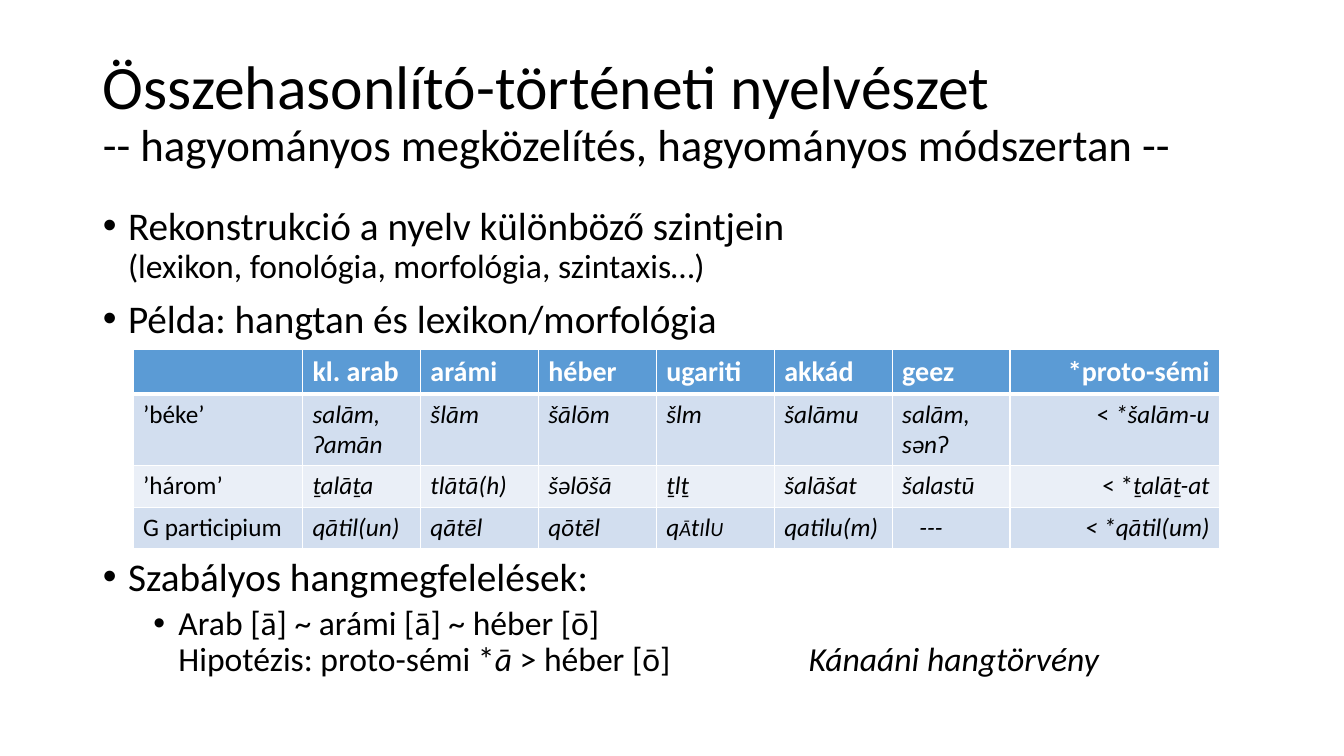
from lxml import etree
from pptx import Presentation
from pptx.dml.color import RGBColor
from pptx.enum.text import MSO_ANCHOR, MSO_AUTO_SIZE, PP_ALIGN
from pptx.oxml.ns import qn
from pptx.util import Inches, Pt

LEFT, RIGHT = PP_ALIGN.LEFT, PP_ALIGN.RIGHT
MIDDLE, TOP = MSO_ANCHOR.MIDDLE, MSO_ANCHOR.TOP
NO_FIT = MSO_AUTO_SIZE.NONE
FONT = "Calibri"
COLORS = {"text": "000000", "line": "FFFFFF", "head": "5B9BD5",
          "odd": "D2DEEF", "even": "EAEFF7"}


def add_runs(p, pieces, color="text"):
    """Add (text, size, style) runs; style may hold b(old), i(talic), c(aps, small)."""
    for text, size, style in pieces:
        for n, line in enumerate(text.split("\n")):
            if n:
                p.add_line_break()
            if not line:
                continue
            r = p.add_run()
            r.text = line
            r.font.name, r.font.size = FONT, Pt(size)
            r.font.bold, r.font.italic = "b" in style, "i" in style
            r.font.color.rgb = RGBColor.from_string(COLORS[color])
            if "c" in style:
                r._r.get_or_add_rPr().set("cap", "small")


def set_borders(cell, bottom):
    tcPr = cell._tc.get_or_add_tcPr()
    for n, (side, width) in enumerate([("L", 1), ("R", 1), ("T", 1), ("B", bottom)]):
        ln = etree.Element(qn(f"a:ln{side}"), w=str(Pt(width)))
        fill = etree.SubElement(ln, qn("a:solidFill"))
        etree.SubElement(fill, qn("a:srgbClr"), val=COLORS["line"])
        tcPr.insert(n, ln)


prs = Presentation()
prs.slide_width, prs.slide_height = Inches(13.33), Inches(7.5)
s = prs.slides.add_slide(prs.slide_layouts[1])
title, body = s.placeholders

# Title
title.left, title.top, title.width, title.height = map(Inches, (0.92, 0.4, 11.5, 1.45))
tf = title.text_frame
tf.auto_size, tf.vertical_anchor = NO_FIT, MIDDLE
p = tf.paragraphs[0]
p.alignment, p.line_spacing = LEFT, 0.9
add_runs(p, [("Összehasonlító-történeti nyelvészet\n", 44, ""),
             ("-- hagyományos megközelítés, hagyományos módszertan --", 32, "")])

# Bullets: level, space before, runs; the third leaves room for the table
bullets = [
    (0, 10, [("Rekonstrukció a nyelv különböző szintjein\n", 28, ""),
             ("(lexikon, fonológia, morfológia, szintaxis…)", 24, "")]),
    (0, 10, [("Példa: hangtan és lexikon/morfológia", 28, "")]),
    (0, 154, [("Szabályos hangmegfelelések:", 28, "")]),
    (1, 5, [("Arab [ā] ~ arámi [ā] ~ héber [ō]\nHipotézis: proto-sémi *", 24, ""),
            ("ā", 24, "i"), (" > héber [ō]\t", 24, ""),
            ("Kánaáni hangtörvény", 24, "i")]),
]
body.left, body.top, body.width, body.height = map(Inches, (0.92, 2, 11.76, 5.15))
tf = body.text_frame
tf.auto_size, tf.vertical_anchor = NO_FIT, TOP
for n, (level, before, pieces) in enumerate(bullets):
    p = tf.add_paragraph() if n else tf.paragraphs[0]
    p.level, p.line_spacing, p.space_before = level, 0.9, Pt(before)
    add_runs(p, pieces)
    pPr = p._p.get_or_add_pPr()
    pPr.set("marL", str(Inches(0.25 + 0.5 * level)))
    pPr.set("indent", str(-Inches(0.25)))
    etree.SubElement(pPr, qn("a:buFont"), typeface="Arial")
    etree.SubElement(pPr, qn("a:buChar"), char="•")
    if level:
        tabs = etree.SubElement(pPr, qn("a:tabLst"))
        etree.SubElement(tabs, qn("a:tab"), pos=str(Inches(7)), algn="l")

# Table of cognates
header = ["", "kl. arab", "arámi", "héber", "ugariti", "akkád", "geez", "*proto-sémi"]
small_caps = [(c, 18, "ic" if c in "āiu" else "i") for c in "qātilu"]
cognates = [
    ["’béke’", "salām, ʔamān", "šlām", "šālōm", "šlm", "šalāmu", "salām, sənʔ",
     [("< ", 18, ""), ("*šalām-u", 18, "i")]],
    ["’három’", "ṯalāṯa", "tlātā(h)", "šəlōšā", "ṯlṯ", "šalāšat", "šalastū",
     [("< *", 18, ""), ("ṯalāṯ-at", 18, "i")]],
    ["G participium", "qātil(un)", "qātēl", "qōtēl", small_caps, "qatilu(m)", "---",
     "< *qātil(um)"],
]
col_widths = [1.68] + [1.17] * 6 + [2.08]
row_heights = [0.43, 0.71, 0.41, 0.41]
table = s.shapes.add_table(4, 8, Inches(1.32), Inches(3.47),
                           Inches(sum(col_widths)), Inches(sum(row_heights))).table
for col, width in zip(table.columns, col_widths):
    col.width = Inches(width)
for i, (row, height) in enumerate(zip([header] + cognates, row_heights)):
    table.rows[i].height = Inches(height)
    for j, content in enumerate(row):
        cell = table.cell(i, j)
        cell.fill.solid()
        fill = "head" if i == 0 else "odd" if i % 2 else "even"
        cell.fill.fore_color.rgb = RGBColor.from_string(COLORS[fill])
        set_borders(cell, 1 if i else 3)
        if content == "---":
            cell.margin_left = Inches(0.27)
        p = cell.text_frame.paragraphs[0]
        p.alignment = RIGHT if j == 7 else LEFT
        if isinstance(content, str):
            style = "b" if i == 0 else "i" if j else ""
            content = [(content, 18 if i else 20, style)]
        add_runs(p, content, "text" if i else "line")

prs.save("out.pptx")
